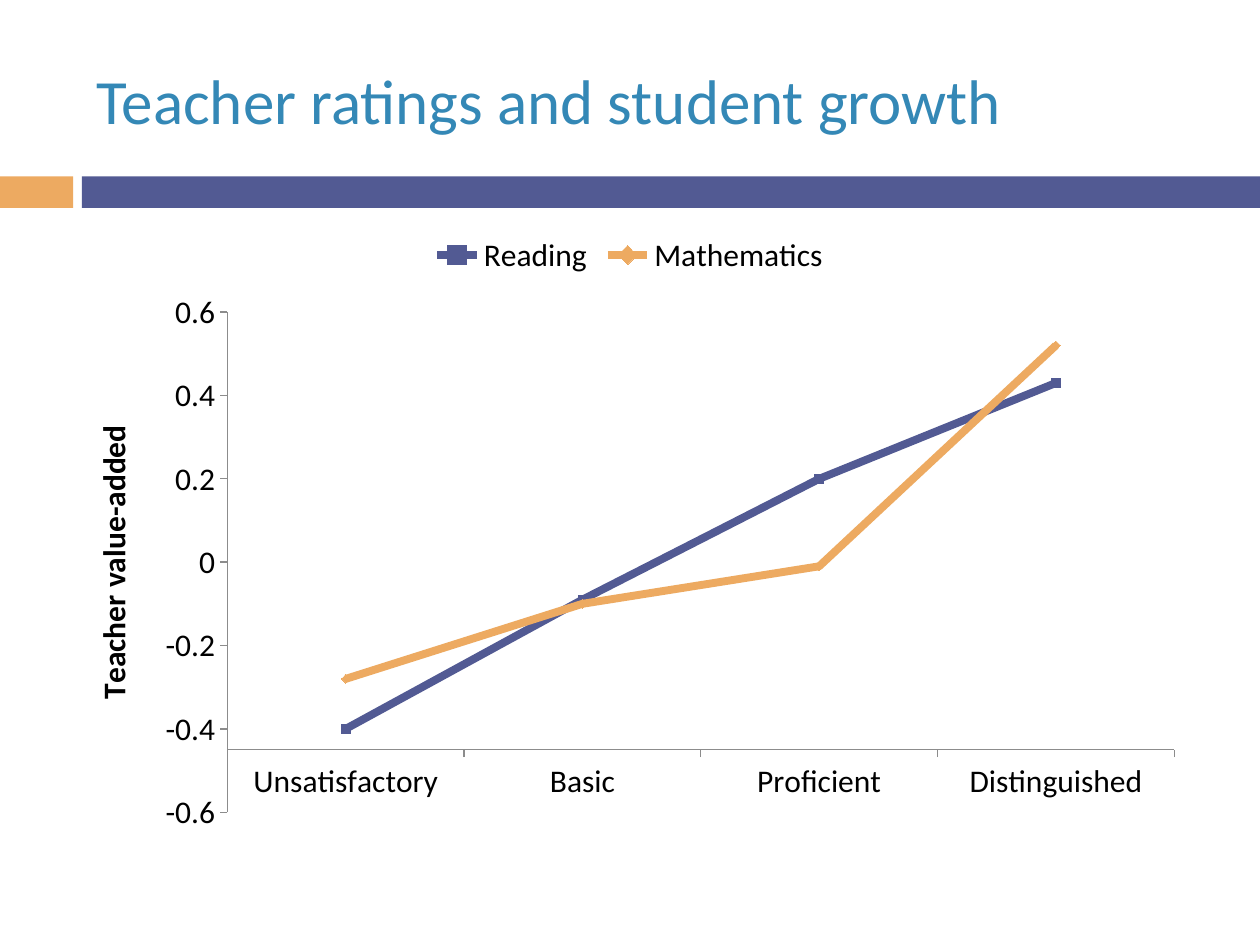
from lxml import etree
from pptx import Presentation
from pptx.chart.data import CategoryChartData
from pptx.dml.color import RGBColor
from pptx.enum import chart as c, shapes, text
from pptx.oxml.ns import qn
from pptx.util import Inches, Pt

INDIGO, ORANGE, BLUE, GRAY = "525A93", "EDAA61", "3488B6", "8C8C8C"


def color(hex_string):
    return RGBColor.from_string(hex_string)


presentation = Presentation()
presentation.slide_width, presentation.slide_height = Inches(10), Inches(7.5)
slide = presentation.slides.add_slide(presentation.slide_layouts[6])

# Divider band
for left, width, fill in [(0, 0.58, ORANGE), (0.65, 9.35, INDIGO)]:
    band = slide.shapes.add_shape(
        shapes.MSO_SHAPE.RECTANGLE, Inches(left), Inches(1.4), Inches(width), Inches(0.25))
    band.shadow.inherit = False
    band.fill.solid()
    band.fill.fore_color.rgb = color(fill)
    band.line.fill.background()

# Title
title = slide.shapes.add_textbox(Inches(0.67), Inches(0.25), Inches(8.92), Inches(1.08))
title.text_frame.word_wrap = True
title.text_frame.vertical_anchor = text.MSO_ANCHOR.MIDDLE
paragraph = title.text_frame.paragraphs[0]
paragraph.text = "Teacher ratings and student growth"
paragraph.font.name, paragraph.font.size = "Calibri", Pt(36)
paragraph.font.color.rgb = color(BLUE)

# Line chart
data = CategoryChartData()
data.categories = ["Unsatisfactory", "Basic", "Proficient", "Distinguished"]
data.add_series("Reading", [-0.4, -0.09, 0.2, 0.43])
data.add_series("Mathematics", [-0.28, -0.1, -0.01, 0.52])
chart = slide.shapes.add_chart(
    c.XL_CHART_TYPE.LINE_MARKERS, Inches(0.5), Inches(1.75), Inches(9), Inches(4.95), data).chart
chart.has_title = False
chart.font.name, chart.font.size = "Calibri", Pt(18)
chart.font.color.rgb = color("000000")
chart.has_legend = True
chart.legend.position = c.XL_LEGEND_POSITION.TOP
chart.legend.include_in_layout = False

chart.plots[0].vary_by_categories = False
markers = [c.XL_MARKER_STYLE.SQUARE, c.XL_MARKER_STYLE.DIAMOND]
for series, line_color, marker in zip(chart.plots[0].series, [INDIGO, ORANGE], markers):
    series.smooth = False
    series.format.line.width = Pt(4.5)
    series.format.line.color.rgb = color(line_color)
    series.marker.style, series.marker.size = marker, 5
    series.marker.format.fill.solid()
    series.marker.format.fill.fore_color.rgb = color(line_color)
    series.marker.format.line.color.rgb = color(line_color)

value_axis, category_axis = chart.value_axis, chart.category_axis
for axis in (value_axis, category_axis):
    axis.has_major_gridlines = False
    axis.major_tick_mark = c.XL_TICK_MARK.OUTSIDE
    axis.minor_tick_mark = c.XL_TICK_MARK.NONE
    axis.format.line.color.rgb = color(GRAY)
    axis.format.line.width = Pt(0.75)
value_axis.crosses_at = -0.45
value_axis.tick_labels.number_format = "General"
value_axis.tick_labels.number_format_is_linked = False
axis_title = value_axis.axis_title.text_frame
axis_title.text = "Teacher value-added"
axis_title.paragraphs[0].font.bold = True
axis_title.paragraphs[0].font.size = Pt(18)

# Fixed inner plot area, as fractions of the chart
plot_area = chart.element.find(".//" + qn("c:plotArea"))
layout = plot_area.find(qn("c:layout"))
if layout is None:
    layout = etree.Element(qn("c:layout"))
    plot_area.insert(0, layout)
manual = etree.SubElement(layout, qn("c:manualLayout"))
for tag, value in [("layoutTarget", "inner"), ("xMode", "edge"), ("yMode", "edge"),
                   ("x", "0.145"), ("y", "0.147"), ("w", "0.835"), ("h", "0.802")]:
    etree.SubElement(manual, qn("c:" + tag)).set("val", value)

presentation.save("out.pptx")
